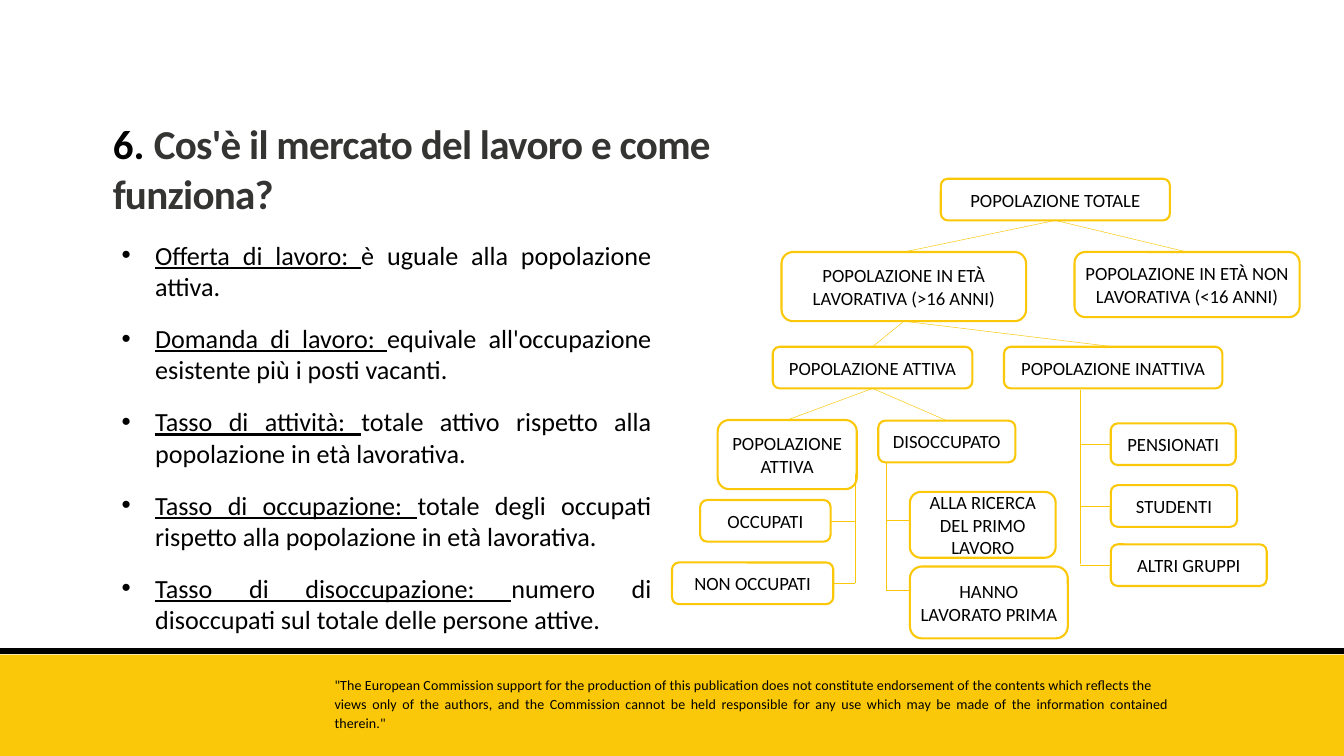
from pptx import Presentation
from pptx.dml.color import RGBColor
from pptx.enum.shapes import MSO_CONNECTOR, MSO_SHAPE
from pptx.enum.text import MSO_ANCHOR, PP_ALIGN
from pptx.oxml.ns import qn
from pptx.util import Inches, Pt
from lxml import etree

YELLOW = RGBColor(0xFA, 0xC7, 0x09)
WHITE = RGBColor(0xFF, 0xFF, 0xFF)
BLACK = RGBColor(0x00, 0x00, 0x00)
CHARCOAL = RGBColor(0x34, 0x34, 0x33)

RECTANGLE, ROUNDED = MSO_SHAPE.RECTANGLE, MSO_SHAPE.ROUNDED_RECTANGLE
STRAIGHT = MSO_CONNECTOR.STRAIGHT
CENTER, JUSTIFY = PP_ALIGN.CENTER, PP_ALIGN.JUSTIFY
MIDDLE = MSO_ANCHOR.MIDDLE
TOP, LEFT, BOTTOM, RIGHT = range(4)

DISCLAIMER = [
    ('"The European Commission support for the production of this publication does not '
     "constitute endorsement of the contents which reflects the", Pt(16.1)),
    ("views only of the authors, and the Commission cannot be held responsible for any use "
     'which may be made of the information contained therein."', 1.13),
]

DEFINITIONS = [
    ("Offerta di lavoro: ", "è uguale alla popolazione attiva."),
    ("Domanda di lavoro: ", "equivale all'occupazione esistente più i posti vacanti."),
    ("Tasso di attività: ", "totale attivo rispetto alla popolazione in età lavorativa."),
    ("Tasso di occupazione: ",
     "totale degli occupati rispetto alla popolazione in età lavorativa."),
    ("Tasso di disoccupazione: ", "numero di disoccupati sul totale delle persone attive."),
]

GROUPS = {
    "total": ("POPOLAZIONE TOTALE", 14, 2.66, 3.41, 0.62),
    "working_age": ("POPOLAZIONE IN ETÀ LAVORATIVA (>16 ANNI)", 11.63, 3.75, 3.64, 1.03),
    "under_age": ("POPOLAZIONE IN ETÀ NON LAVORATIVA (<16 ANNI)", 15.99, 3.75, 3.35, 0.97),
    "active": ("POPOLAZIONE ATTIVA", 11.5, 5.16, 2.97, 0.62),
    "inactive": ("POPOLAZIONE INATTIVA", 14.94, 5.16, 3.25, 0.62),
    "active_part": ("POPOLAZIONE ATTIVA", 10.68, 6.25, 2.07, 1.03),
    "unemployed": ("DISOCCUPATO", 13.07, 6.26, 2.04, 0.62),
    "employed": ("OCCUPATI", 10.42, 7.44, 1.94, 0.62),
    "not_employed": ("NON OCCUPATI", 10, 8.37, 2.4, 0.62),
    "first_job": ("ALLA RICERCA DEL PRIMO LAVORO", 13.54, 7.32, 2.17, 0.98),
    "worked_before": ("HANNO LAVORATO PRIMA", 13.54, 8.43, 2.35, 1.07),
    "pensioners": ("PENSIONATI", 16.53, 6.3, 1.86, 0.62),
    "students": ("STUDENTI", 16.53, 7.22, 1.88, 0.62),
    "others": ("ALTRI GRUPPI", 16.53, 8.1, 2.32, 0.62),
}

SPLITS = {
    "total": ("working_age", "under_age"),
    "working_age": ("active", "inactive"),
    "active": ("active_part", "unemployed"),
}

TRUNKS = [(16.07, 5.8, 8.4), (12.73, 7.06, 8.67), (13.19, 6.87, 8.79)]
JOINED_TWIGS = [
    ("pensioners", LEFT, 16.07, 6.61),
    ("students", LEFT, 16.07, 7.53),
    ("others", LEFT, 16.07, 8.41),
    ("employed", RIGHT, 12.73, 7.75),
    ("not_employed", RIGHT, 12.73, 8.68),
]
FREE_TWIG_LEVELS = [7.74, 8.79]


def set_font(font, size, color=BLACK):
    font.name = "Calibri"
    font.size = Pt(size)
    font.color.rgb = color


def set_tracking(run, points):
    run._r.get_or_add_rPr().set("spc", str(round(points * 100)))


def add_text_frame(slide, left, top, width, height):
    box = slide.shapes.add_textbox(Inches(left), Inches(top), Inches(width), Inches(height))
    box.text_frame.word_wrap = True
    return box.text_frame


def next_paragraph(frame, index):
    return frame.add_paragraph() if index else frame.paragraphs[0]


def add_line(slide, start, end, color=YELLOW, width=0.5):
    line = slide.shapes.add_connector(STRAIGHT, *map(Inches, start + end))
    line.line.color.rgb = color
    line.line.width = Pt(width)
    etree.SubElement(line._element.spPr, qn("a:effectLst"))
    return line


def add_footer(slide):
    band = slide.shapes.add_shape(RECTANGLE, 0, Inches(9.74), Inches(20), Inches(1.51))
    band.shadow.inherit = False
    band.fill.solid()
    band.fill.fore_color.rgb = YELLOW
    band.line.fill.background()
    add_line(slide, (0, 9.69), (20, 9.69), BLACK, 6.75)

    frame = add_text_frame(slide, 4.88, 10.04, 12.62, 0.88)
    for index, (sentence, spacing) in enumerate(DISCLAIMER):
        paragraph = next_paragraph(frame, index)
        paragraph.alignment = JUSTIFY
        paragraph.line_spacing = spacing
        run = paragraph.add_run()
        run.text = sentence
        set_tracking(run, 0.1)
        set_font(paragraph.font, 15)


def add_title(slide):
    paragraph = add_text_frame(slide, 1.58, 1.72, 11, 1.58).paragraphs[0]
    number, question = paragraph.add_run(), paragraph.add_run()
    number.text = "6. "
    question.text = "Cos'è il mercato del lavoro e come funziona?"
    for run, color in ((number, BLACK), (question, CHARCOAL)):
        set_font(run.font, 44, color)
        run.font.bold = True
    set_tracking(question, -0.8)


def add_definitions(slide):
    frame = add_text_frame(slide, 1.71, 3.51, 8.08, 6.5)
    for index, (term, meaning) in enumerate(DEFINITIONS):
        paragraph = next_paragraph(frame, index)
        paragraph.alignment = JUSTIFY
        if index:
            paragraph.space_before = Pt(22)
        properties = paragraph._p.get_or_add_pPr()
        properties.set("marL", str(Inches(0.5)))
        properties.set("indent", str(-Inches(0.5)))
        etree.SubElement(properties, qn("a:buFont"), typeface="Arial")
        etree.SubElement(properties, qn("a:buChar"), char="•")
        set_font(paragraph.font, 28)
        term_run = paragraph.add_run()
        term_run.text = term
        term_run.font.underline = True
        paragraph.add_run().text = meaning


def add_group(slide, label, left, top, width, height):
    group = slide.shapes.add_shape(
        ROUNDED, Inches(left), Inches(top), Inches(width), Inches(height))
    group.shadow.inherit = False
    group.fill.solid()
    group.fill.fore_color.rgb = WHITE
    group.line.color.rgb = YELLOW
    group.line.width = Pt(2.25)
    frame = group.text_frame
    frame.word_wrap = True
    frame.vertical_anchor = MIDDLE
    paragraph = frame.paragraphs[0]
    paragraph.text = label
    paragraph.alignment = CENTER
    set_font(paragraph.font, 20)
    return group


def add_population_tree(slide):
    groups = {key: add_group(slide, *group) for key, group in GROUPS.items()}
    for parent, children in SPLITS.items():
        for child in children:
            branch = add_line(slide, (0, 0), (1, 1))
            branch.begin_connect(groups[parent], BOTTOM)
            branch.end_connect(groups[child], TOP)
    for x, top, bottom in TRUNKS:
        add_line(slide, (x, top), (x, bottom))
    for key, side, x, y in JOINED_TWIGS:
        twig = add_line(slide, (x, y), (x, y))
        twig.end_connect(groups[key], side)
    for y in FREE_TWIG_LEVELS:
        add_line(slide, (13.19, y), (13.54, y))


def main():
    presentation = Presentation()
    presentation.slide_width = Inches(20)
    presentation.slide_height = Inches(11.25)
    slide = presentation.slides.add_slide(presentation.slide_layouts[6])
    add_footer(slide)
    add_title(slide)
    add_definitions(slide)
    add_population_tree(slide)
    presentation.save("out.pptx")


if __name__ == "__main__":
    main()
